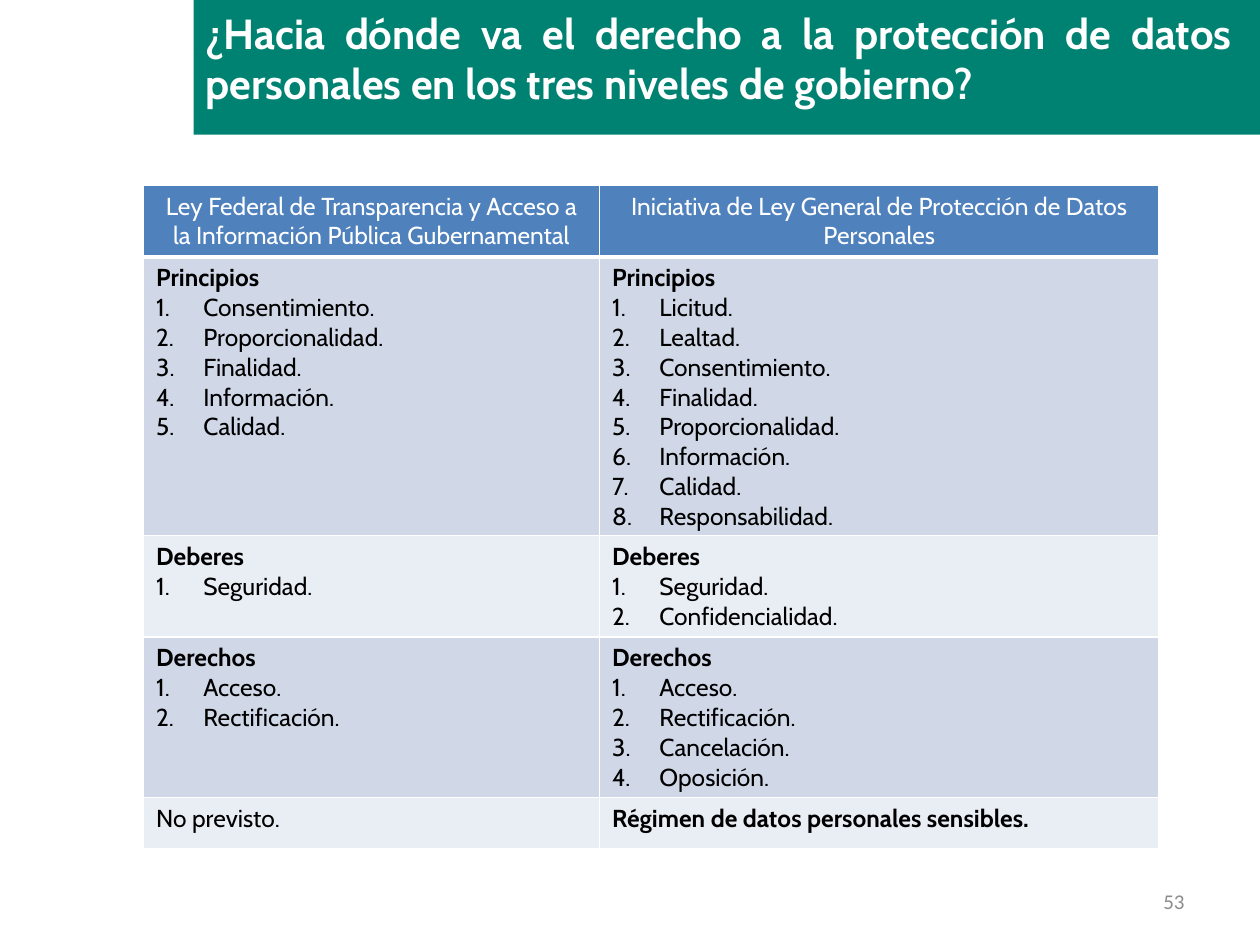
from lxml import etree
from pptx import Presentation
from pptx.dml.color import RGBColor
from pptx.enum.shapes import MSO_SHAPE
from pptx.enum.text import MSO_ANCHOR, PP_ALIGN
from pptx.oxml.ns import qn
from pptx.util import Pt

RECTANGLE = MSO_SHAPE.RECTANGLE
MIDDLE, TOP = MSO_ANCHOR.MIDDLE, MSO_ANCHOR.TOP
LEFT, CENTER, RIGHT, JUSTIFY = PP_ALIGN.LEFT, PP_ALIGN.CENTER, PP_ALIGN.RIGHT, PP_ALIGN.JUSTIFY

COLORS = {
    "banner": "008272", "header": "4F81BD", "band_dark": "D0D8E8",
    "band_light": "E9EDF4", "white": "FFFFFF", "black": "000000", "gray": "8C8C8C",
}
FONT = "Cabin"
TITLE = "¿Hacia dónde va el derecho a la protección de datos personales en los tres niveles de gobierno?"
PAGE_NUMBER = "53"

HEADERS = (
    "Ley Federal de Transparencia y Acceso a la Información Pública Gubernamental",
    "Iniciativa de Ley General de Protección de Datos Personales",
)
# Each cell: opening line, whether it is bold, numbered items
ROWS = [
    (("Principios", True, ["Consentimiento.", "Proporcionalidad.", "Finalidad.",
                           "Información.", "Calidad."]),
     ("Principios", True, ["Licitud.", "Lealtad.", "Consentimiento.", "Finalidad.",
                           "Proporcionalidad.", "Información.", "Calidad.",
                           "Responsabilidad."])),
    (("Deberes", True, ["Seguridad."]),
     ("Deberes", True, ["Seguridad.", "Confidencialidad."])),
    (("Derechos", True, ["Acceso.", "Rectificación."]),
     ("Derechos", True, ["Acceso.", "Rectificación.", "Cancelación.", "Oposición."])),
    (("No previsto.", False, []),
     ("Régimen de datos personales sensibles.", True, [])),
]

TABLE_LEFT, TABLE_TOP = 82, 105.8
COLUMN_WIDTHS = (260.6, 319.7)
HEADER_LINES = 2
LINE_HEIGHT, CELL_PADDING, MINIMUM_HEIGHT = 16.9, 7.2, 29.5
NUMBER_INDENT = 27


def rgb(name):
    return RGBColor.from_string(COLORS[name])


def add_run(paragraph, text, size, color, bold=False, font=FONT):
    run = paragraph.add_run()
    run.text = text
    run.font.name = font
    run.font.size = Pt(size)
    run.font.bold = bold
    run.font.color.rgb = rgb(color)


def add_label(slide, box, text, size, color, alignment, anchor=TOP, bold=False, font=FONT):
    frame = slide.shapes.add_textbox(*map(Pt, box)).text_frame
    frame.word_wrap = True
    frame.vertical_anchor = anchor
    paragraph = frame.paragraphs[0]
    paragraph.alignment = alignment
    add_run(paragraph, text, size, color, bold, font)


def number_paragraph(paragraph):
    properties = paragraph._p.get_or_add_pPr()
    properties.set("marL", str(Pt(NUMBER_INDENT)))
    properties.set("indent", str(-Pt(NUMBER_INDENT)))
    etree.SubElement(properties, qn("a:buFont"), typeface="+mj-lt")
    etree.SubElement(properties, qn("a:buAutoNum"), type="arabicPeriod")


def style_cell(cell, fill, bottom_width=1):
    """Give the cell white borders and a solid fill."""
    properties = cell._tc.get_or_add_tcPr()
    for side, width in (("L", 1), ("R", 1), ("T", 1), ("B", bottom_width)):
        line = etree.SubElement(properties, qn(f"a:ln{side}"), w=str(Pt(width)))
        solid = etree.SubElement(line, qn("a:solidFill"))
        etree.SubElement(solid, qn("a:srgbClr"), val=COLORS["white"])
    cell.fill.solid()
    cell.fill.fore_color.rgb = rgb(fill)


def fill_cell(cell, heading, bold, items):
    frame = cell.text_frame
    add_run(frame.paragraphs[0], heading, 14, "black", bold)
    for item in items:
        paragraph = frame.add_paragraph()
        number_paragraph(paragraph)
        add_run(paragraph, item, 14, "black")


def add_comparison(slide):
    line_counts = [HEADER_LINES] + [
        max(1 + len(items) for _, _, items in row) for row in ROWS]
    heights = [max(MINIMUM_HEIGHT, count * LINE_HEIGHT + CELL_PADDING)
               for count in line_counts]
    table = slide.shapes.add_table(
        len(heights), len(HEADERS), Pt(TABLE_LEFT), Pt(TABLE_TOP),
        Pt(sum(COLUMN_WIDTHS)), Pt(sum(heights))).table
    for column, width in zip(table.columns, COLUMN_WIDTHS):
        column.width = Pt(width)
    for row, height in zip(table.rows, heights):
        row.height = Pt(height)

    for column, text in enumerate(HEADERS):
        cell = table.cell(0, column)
        style_cell(cell, "header", bottom_width=3)
        paragraph = cell.text_frame.paragraphs[0]
        paragraph.alignment = CENTER
        add_run(paragraph, text, 14, "white")
    for index, row in enumerate(ROWS, start=1):
        for column, content in enumerate(row):
            cell = table.cell(index, column)
            style_cell(cell, "band_dark" if index % 2 else "band_light")
            fill_cell(cell, *content)


def main():
    presentation = Presentation()
    presentation.slide_width, presentation.slide_height = Pt(720), Pt(540)
    slide = presentation.slides.add_slide(presentation.slide_layouts[6])

    banner = slide.shapes.add_shape(RECTANGLE, Pt(110.6), Pt(0), Pt(609.4), Pt(77))
    banner.shadow.inherit = False
    banner.fill.solid()
    banner.fill.fore_color.rgb = rgb("banner")
    banner.line.fill.background()

    add_label(slide, (516, 500.5, 168, 28.8), PAGE_NUMBER, 12, "gray", RIGHT,
              anchor=MIDDLE, font="Calibri")
    add_label(slide, (110.6, 0.7, 600.5, 65.5), TITLE, 24, "white", JUSTIFY, bold=True)
    add_comparison(slide)
    presentation.save("out.pptx")


if __name__ == "__main__":
    main()
